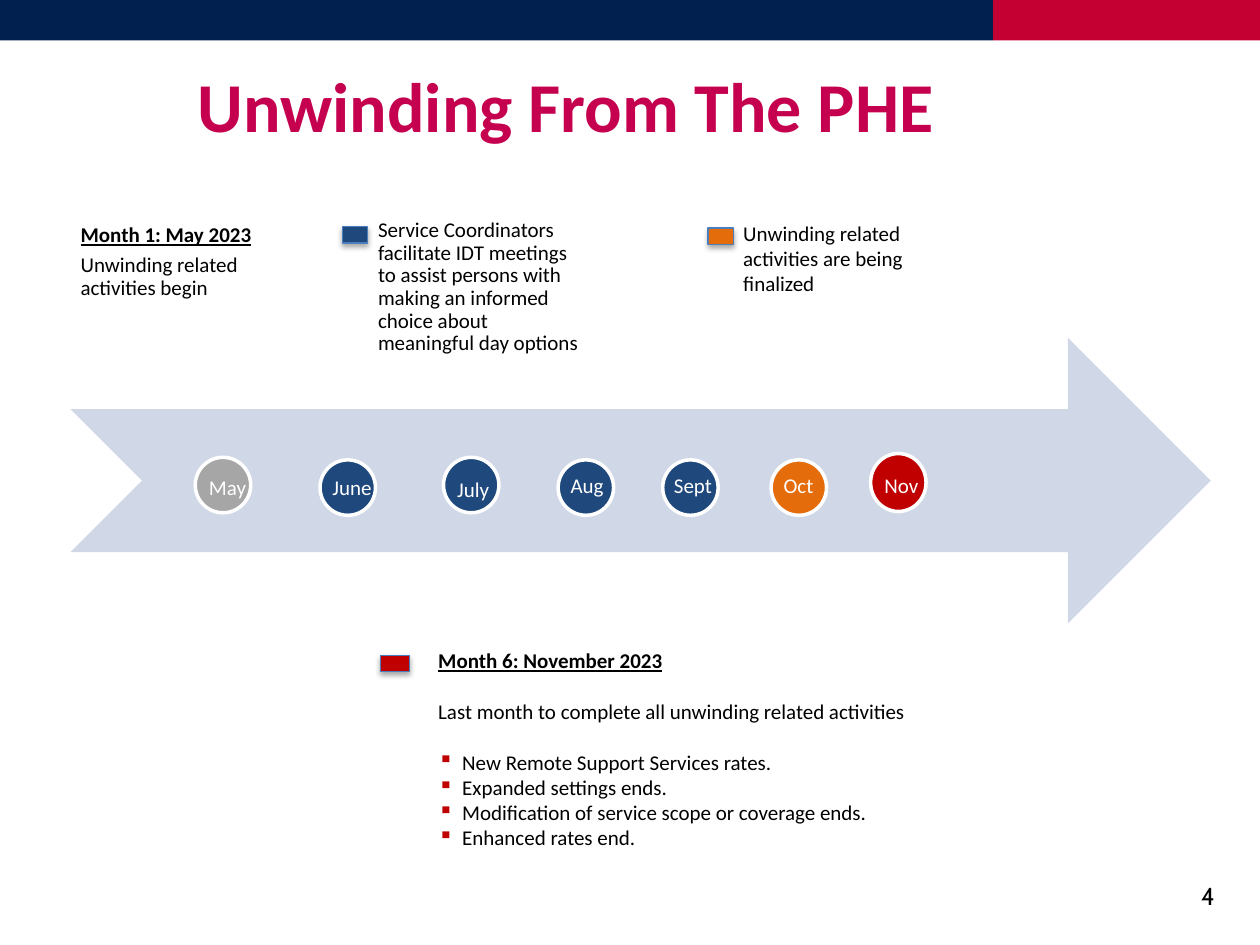
from lxml import etree
from pptx import Presentation
from pptx.dml.color import RGBColor
from pptx.enum.shapes import MSO_SHAPE
from pptx.enum.text import MSO_ANCHOR, PP_ALIGN
from pptx.oxml.ns import qn
from pptx.util import Inches, Pt

RECT, OVAL = MSO_SHAPE.RECTANGLE, MSO_SHAPE.OVAL
ARROW = MSO_SHAPE.NOTCHED_RIGHT_ARROW
TOP, BOTTOM = MSO_ANCHOR.TOP, MSO_ANCHOR.BOTTOM
LEFT, CENTER, RIGHT = PP_ALIGN.LEFT, PP_ALIGN.CENTER, PP_ALIGN.RIGHT

BLACK = RGBColor(0x00, 0x00, 0x00)
WHITE = RGBColor(0xFF, 0xFF, 0xFF)
NAVY = RGBColor(0x01, 0x1F, 0x4F)
CRIMSON = RGBColor(0xC4, 0x00, 0x33)
MAGENTA = RGBColor(0xC4, 0x00, 0x4F)
PALE = RGBColor(0xD0, 0xD8, 0xE8)
GRAY = RGBColor(0xA6, 0xA6, 0xA6)
BLUE = RGBColor(0x1F, 0x49, 0x7D)
ORANGE = RGBColor(0xE4, 0x6C, 0x0A)
RED = RGBColor(0xC0, 0x00, 0x00)
EDGE = RGBColor(0x4B, 0x7E, 0xBC)

WIDTH, HEIGHT = Inches(10), Inches(7.5)
COL, ROW = WIDTH / 100, HEIGHT / 75
LINE = 14.65
DOT = 4.4

MONTHS = [
    ("May", GRAY, 15.5, 36.3, DOT, 15.6, 37.2, 5.8),
    ("June", BLUE, 25.4, 36.5, DOT, 25.4, 37.2, 5.2),
    ("July", BLUE, 35.2, 36.3, DOT, 35.3, 37.3, 5.4),
    ("Aug", BLUE, 44.3, 36.5, DOT, 44.3, 37, 5.2),
    ("Sept", BLUE, 52.6, 36.5, DOT, 52.5, 37, 5.1),
    ("Oct", ORANGE, 61.2, 36.5, DOT, 61.2, 37, 4.9),
    ("Nov", RED, 69.1, 36, 4.6, 69.2, 37, 7.6),
]
KEYS = [(BLUE, 27.2, 18, 2), (ORANGE, 56.2, 18.1, 2), (RED, 30.2, 52, 2.3)]
ENDINGS = [
    "New Remote Support Services rates.",
    "Expanded settings ends.",
    "Modification of service scope or coverage ends.",
    "Enhanced rates end.",
]


def place(left, top, width, height):
    return [round(v) for v in (left * COL, top * ROW, width * COL, height * ROW)]


def add_box(slide, kind, at, fill, line=None, weight=0):
    sp = slide.shapes.add_shape(kind, *place(*at))
    sp.shadow.inherit = False
    sp.fill.solid()
    sp.fill.fore_color.rgb = fill
    if line is None:
        sp.line.fill.background()
    else:
        sp.line.color.rgb = line
        sp.line.width = Pt(weight)
    return sp


def add_shadow(sp):
    effects = sp._element.spPr.find(qn("a:effectLst"))
    shadow = etree.SubElement(effects, qn("a:outerShdw"), blurRad=str(Pt(3.1)),
                              dist=str(Pt(1.8)), dir="5400000", rotWithShape="0")
    color = etree.SubElement(shadow, qn("a:srgbClr"), val=str(BLACK))
    etree.SubElement(color, qn("a:alpha"), val="35000")


def add_bullet(p):
    pPr = p._p.get_or_add_pPr()
    pPr.set("marL", str(Inches(0.19)))
    pPr.set("indent", str(-Inches(0.19)))
    color = etree.SubElement(pPr, qn("a:buClr"))
    etree.SubElement(color, qn("a:srgbClr"), val=str(RED))
    etree.SubElement(pPr, qn("a:buChar"), char="▪")


def write(tf, text, size=12, color=BLACK, font="Calibri", heading=False, bold=False,
          align=LEFT, spacing=None, before=None, after=None, bullet=False):
    p = tf.paragraphs[0] if not tf.text else tf.add_paragraph()
    p.alignment = align
    p.line_spacing = spacing
    if before is not None:
        p.space_before = Pt(before)
    if after is not None:
        p.space_after = Pt(after)
    if bullet:
        add_bullet(p)
    r = p.add_run()
    r.text = text
    r.font.name = font
    r.font.size = Pt(size)
    r.font.bold = bold or heading
    r.font.underline = heading
    r.font.color.rgb = color


def set_frame(tf, anchor=TOP, inset=None):
    tf.word_wrap = True
    tf.vertical_anchor = anchor
    if inset is not None:
        tf.margin_left = tf.margin_right = Inches(inset)
        tf.margin_top = tf.margin_bottom = Inches(inset)
    return tf


def add_frame(slide, at, **options):
    return set_frame(slide.shapes.add_textbox(*place(*at)).text_frame, **options)


def add_title(slide, text):
    title = slide.shapes.title
    title.left, title.top, title.width, title.height = place(2.7, 4.8, 84.4, 9.3)
    tf = set_frame(title.text_frame, inset=0)
    write(tf, text, size=40, color=MAGENTA, bold=True, align=CENTER, spacing=Pt(49))


def add_timeline(slide):
    add_box(slide, ARROW, (5.6, 26.8, 90.5, 22.7), PALE)
    for name, color, left, top, height, text_left, text_top, width in MONTHS:
        add_box(slide, OVAL, (left, top, DOT, height), color, WHITE, 2)
        tf = add_frame(slide, (text_left, text_top, width, 3))
        write(tf, name, color=WHITE)


def add_notes_above(slide):
    tf = add_frame(slide, (5.5, 17.3, 17.3, 7.4), anchor=BOTTOM, inset=0.09)
    write(tf, "Month 1: May 2023", heading=True, spacing=0.9, after=4.2)
    write(tf, "Unwinding related activities begin", spacing=0.9, after=4.2)
    tf = add_frame(slide, (29.1, 16.5, 18.5, 15.4), inset=0.09)
    write(tf, "Service Coordinators facilitate IDT meetings to assist persons with "
              "making an informed choice about meaningful day options",
          spacing=0.9, after=4.2)
    tf = add_frame(slide, (58, 17, 16.2, 7.1))
    write(tf, "Unwinding related activities are being finalized")


def add_november(slide):
    tf = add_frame(slide, (33.8, 50.9, 47.7, 17.2))
    write(tf, "Month 6: November 2023", heading=True)
    write(tf, "Last month to complete all unwinding related activities", before=LINE)
    for i, ending in enumerate(ENDINGS):
        write(tf, ending, bullet=True, before=0 if i else LINE)


def main():
    prs = Presentation()
    prs.slide_width, prs.slide_height = WIDTH, HEIGHT
    slide = prs.slides.add_slide(prs.slide_layouts[5])
    add_box(slide, RECT, (78.8, 0, 21.2, 3.2), CRIMSON)
    add_box(slide, RECT, (0, 0, 78.8, 3.2), NAVY)
    add_title(slide, "Unwinding From The PHE")
    add_timeline(slide)
    add_notes_above(slide)
    for color, left, top, width in KEYS:
        add_shadow(add_box(slide, RECT, (left, top, width, 1.3), color, EDGE, 0.75))
    add_november(slide)
    write(add_frame(slide, (93, 69.4, 4.4, 4)), "4", size=14, font="Cabin", align=RIGHT)
    prs.save("out.pptx")


if __name__ == "__main__":
    main()
